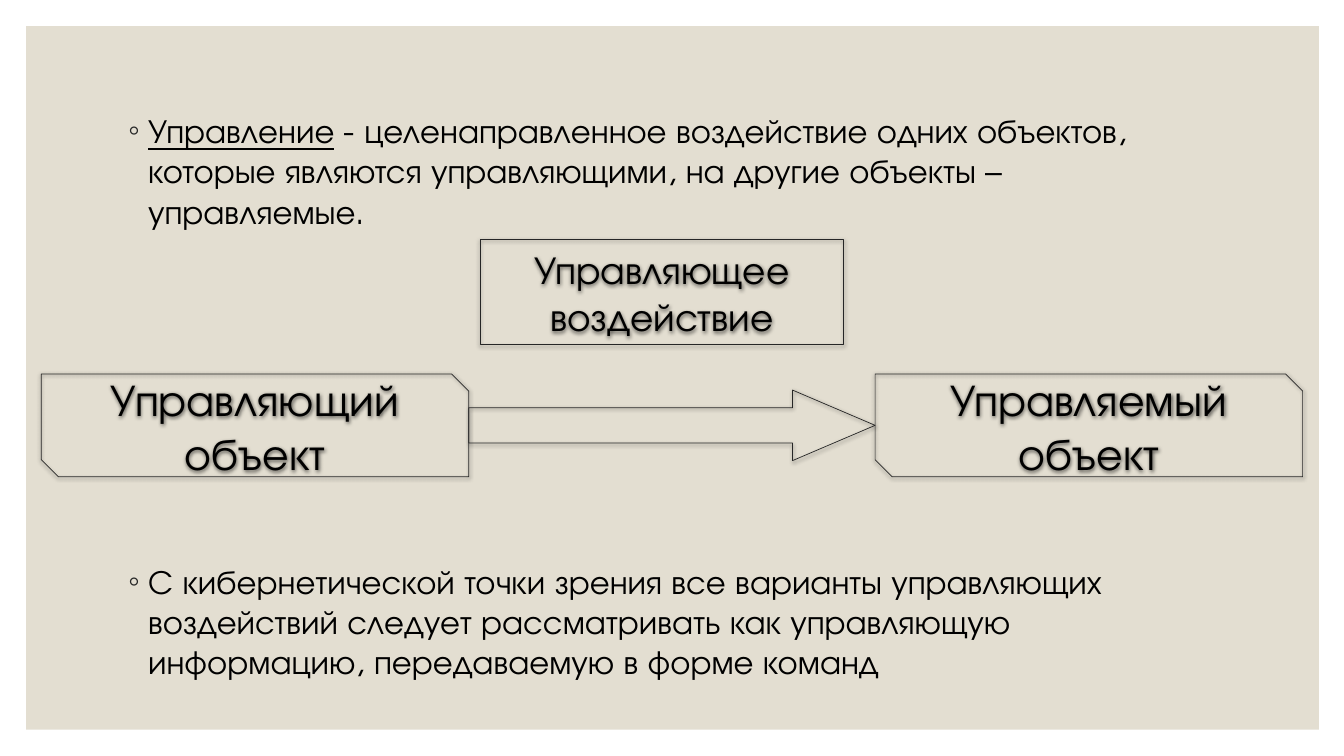
from lxml import etree
from pptx import Presentation
from pptx.dml.color import RGBColor
from pptx.enum.shapes import MSO_SHAPE as Preset
from pptx.enum.text import MSO_ANCHOR as Anchor, MSO_AUTO_SIZE as AutoSize, PP_ALIGN as Align
from pptx.oxml import parse_xml
from pptx.oxml.ns import nsdecls, qn
from pptx.util import Inches, Pt

FONT = "TeX Gyre Adventor"
COLORS = {"panel": "E3DED1", "outline": "262626", "text": "000000"}
SHADOW = (
    f'<a:effectLst {nsdecls("a")}><a:outerShdw blurRad="38100" dist="12700" dir="5400000" '
    f'rotWithShape="0"><a:srgbClr val="{COLORS["text"]}"><a:alpha val="63000"/></a:srgbClr>'
    "</a:outerShdw></a:effectLst>"
)


def add_span(para, text, size, underline=False):
    span = para.add_run()
    span.text = text
    for name, value in {"name": FONT, "size": Pt(size), "underline": underline}.items():
        setattr(span.font, name, value)
    span.font.color.rgb = RGBColor.from_string(COLORS["text"])


def add_outlined(preset, place, lines=(), size=None):
    """Add an unfilled shape with a thin outline, a soft shadow and centred lines of text."""
    shape = page.shapes.add_shape(preset, *map(Inches, place))
    shape.fill.background()
    shape.line.color.rgb = RGBColor.from_string(COLORS["outline"])
    shape.line.width = Pt(0.5)
    shape.element.spPr.append(parse_xml(SHADOW))
    frame = shape.text_frame
    frame.word_wrap = True
    frame.vertical_anchor = Anchor.MIDDLE
    for number, line in enumerate(lines):
        para = frame.add_paragraph() if number else frame.paragraphs[0]
        para.alignment = Align.CENTER
        add_span(para, line, size)
    return shape


deck = Presentation()
deck.slide_width, deck.slide_height = Inches(13.33), Inches(7.5)
page = deck.slides.add_slide(deck.slide_layouts[1])
title, body = page.placeholders
title.element.getparent().remove(title.element)

# Background panel, behind the body text
panel = page.shapes.add_shape(Preset.RECTANGLE, *map(Inches, (0.26, 0.26, 12.82, 6.98)))
panel.shadow.inherit = False
panel.fill.solid()
panel.fill.fore_color.rgb = RGBColor.from_string(COLORS["panel"])
panel.line.fill.background()
body.element.addprevious(panel.element)

# Two bulleted statements, with room for the diagram between them
body.left, body.top, body.width, body.height = map(Inches, (1.17, 1.04, 11, 6.06))
frame = body.text_frame
for name, value in {"word_wrap": True, "auto_size": AutoSize.NONE, "vertical_anchor": Anchor.TOP}.items():
    setattr(frame, name, value)
statements = [
    (0, [("Управление", True),
         (" - целенаправленное воздействие одних объектов, которые являются управляющими, "
          "на другие объекты – управляемые.", False)]),
    (235.5, [("С кибернетической точки зрения все варианты управляющих воздействий следует "
              "рассматривать как управляющую информацию, передаваемую в форме команд", False)]),
]
for number, (gap, spans) in enumerate(statements):
    para = frame.add_paragraph() if number else frame.paragraphs[0]
    para.space_before = Pt(gap)
    for text, underline in spans:
        add_span(para, text, 24, underline)
    props = para._p.get_or_add_pPr()
    props.set("marL", str(Inches(0.2)))
    props.set("indent", str(-Inches(0.2)))
    bullet_color = etree.SubElement(props, qn("a:buClr"))
    etree.SubElement(bullet_color, qn("a:srgbClr"), val=COLORS["outline"])
    etree.SubElement(props, qn("a:buChar"), char="◦")

# Diagram: controlling object, arrow, controlled object
object_top, object_width, object_height = 3.71, 4.24, 1.02
left_object, right_object = 0.41, 8.68
for left, label in ((left_object, "Управляющий объект"), (right_object, "Управляемый объект")):
    add_outlined(Preset.SNIP_2_DIAG_RECTANGLE,
                 (left, object_top, object_width, object_height), [label], 32)

arrow_left, arrow_height = left_object + object_width, 0.7
arrow_top = object_top + (object_height - arrow_height) / 2
arrow = add_outlined(Preset.RIGHT_ARROW,
                     (arrow_left, arrow_top, right_object - arrow_left, arrow_height))
arrow.adjustments[1] = 1.17
add_outlined(Preset.RECTANGLE, (4.76, 2.38, 3.61, 1.04), ["Управляющее", "воздействие"], 28)

deck.save("out.pptx")
